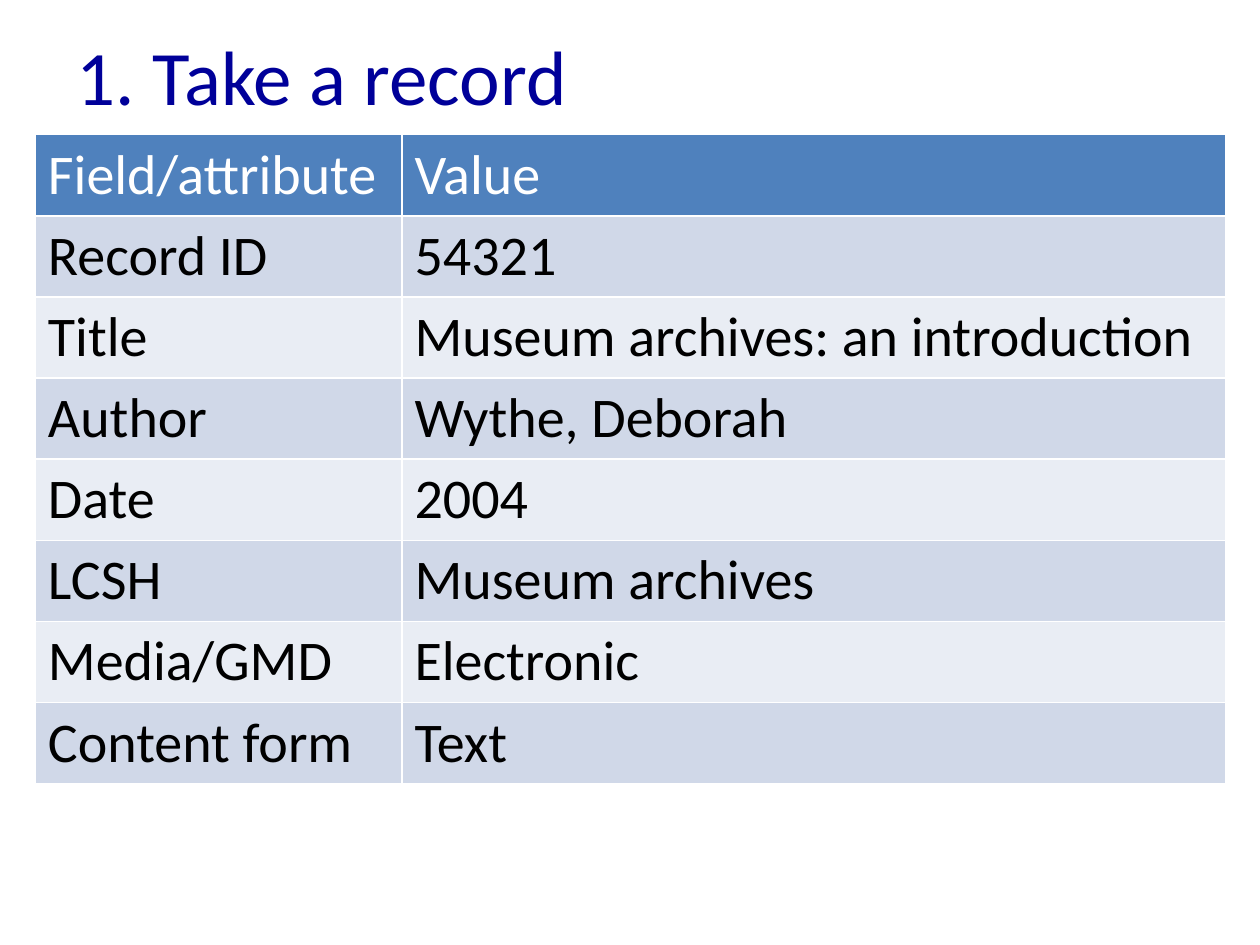
"""Build a slide that shows a catalogue record as a table of fields and values."""
from pptx import Presentation
from pptx.dml.color import RGBColor
from pptx.enum.text import MSO_ANCHOR, PP_ALIGN
from pptx.util import Pt

LEFT = PP_ALIGN.LEFT
MIDDLE = MSO_ANCHOR.MIDDLE
FONT = "Calibri"
NAVY = RGBColor(0x00, 0x00, 0x99)
WHITE = RGBColor(0xFF, 0xFF, 0xFF)
BLACK = RGBColor(0x00, 0x00, 0x00)
HEADER_BLUE = RGBColor(0x4F, 0x81, 0xBD)
BANDS = (RGBColor(0xE9, 0xED, 0xF4), RGBColor(0xD0, 0xD8, 0xE8))

RECORD = [
    ("Field/attribute", "Value"),
    ("Record ID", "54321"),
    ("Title", "Museum archives: an introduction"),
    ("Author", "Wythe, Deborah"),
    ("Date", "2004"),
    ("LCSH", "Museum archives"),
    ("Media/GMD", "Electronic"),
    ("Content form", "Text"),
]
COLUMN_WIDTHS = (209.5, 471)

prs = Presentation()
prs.slide_width, prs.slide_height = Pt(720), Pt(540)
slide = prs.slides.add_slide(prs.slide_layouts[5])

title = slide.shapes.title
title.left, title.top, title.width, title.height = Pt(36.7), Pt(9.4), Pt(648), Pt(67)
title.text_frame.text = "1. Take a record"
title.text_frame.vertical_anchor = MIDDLE
heading = title.text_frame.paragraphs[0]
heading.alignment = LEFT
heading.font.name = FONT
heading.font.size = Pt(44)
heading.font.color.rgb = NAVY

record_table = slide.shapes.add_table(
    len(RECORD), len(COLUMN_WIDTHS), Pt(20.2), Pt(77), Pt(sum(COLUMN_WIDTHS)), Pt(365)
).table
for column, width in zip(record_table.columns, COLUMN_WIDTHS):
    column.width = Pt(width)

for row, entries in enumerate(RECORD):
    is_header = row == 0
    for col, entry in enumerate(entries):
        cell = record_table.cell(row, col)
        cell.text = entry
        cell.fill.solid()
        cell.fill.fore_color.rgb = HEADER_BLUE if is_header else BANDS[row % 2]
        font = cell.text_frame.paragraphs[0].font
        font.name = FONT
        font.size = Pt(32)
        font.bold = False
        font.color.rgb = WHITE if is_header else BLACK

prs.save("out.pptx")
